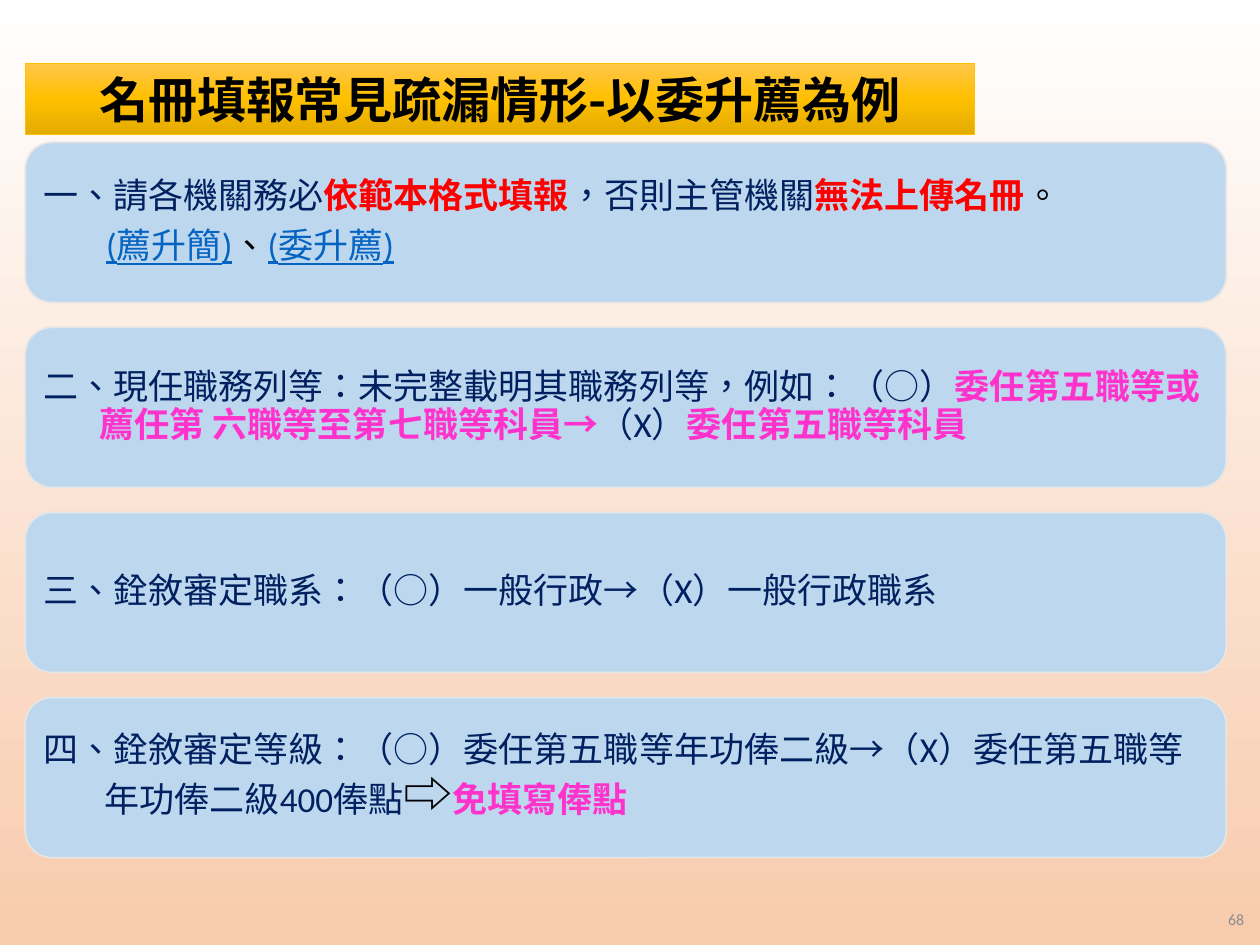
from typing import NamedTuple

from lxml import etree
from pptx import Presentation, util as u
from pptx.dml.color import RGBColor
from pptx.enum import shapes, text
from pptx.oxml import ns

Cm, Pt = u.Cm, u.Pt
CJK = "Noto Sans CJK SC"
NAVY, RED, PINK, BLACK, LINK = "002060", "FF0000", "FF33CC", "000000", "0563C1"


class Run(NamedTuple):
    text: str
    color: str = NAVY
    bold: bool = False
    underline: bool = False
    size: float = 20
    font: str = "Calibri"


class Para(NamedTuple):
    runs: list[Run]
    left: float = 0
    hanging: float = 0


class Box(NamedTuple):
    left: float
    top: float
    width: float
    height: float

    def emu(self) -> list[int]:
        return [Cm(v) for v in self]

    def inset(self, d: float) -> "Box":
        return Box(self.left + d, self.top + d, self.width - 2 * d, self.height - 2 * d)


TITLE = Box(0.51, 1.27, 19.13, 1.45)
FIRST_CARD = Box(0.51, 2.87, 24.21, 3.23)
CARD_PITCH = 3.73
PAGE_NUMBER = Box(19.61, 18.03, 5.72, 1.02)

CARDS = [
    [
        Para([Run("一、請各機關務必"), Run("依範本格式填報", RED, True),
              Run("，否則主管機關"), Run("無法上傳名冊", RED, True),
              Run("。", BLACK)], 1.47, 1.47),
        Para([Run("(薦升簡)", LINK, underline=True), Run("、", BLACK),
              Run("(委升薦)", LINK, underline=True)], 2.74, 1.47),
    ],
    [Para([Run("二、現任職務列等：未完整載明其職務列等，例如：（○）"),
           Run("委任第五職等或薦任第 六職等至第七職等科員→", PINK, True),
           Run("（X）"), Run("委任第五職等科員", PINK, True)], 1.14, 1.24)],
    [Para([Run("三、銓敘審定職系：（○）一般行政→（X）一般行政職系")])],
    [Para([Run("四、銓敘審定等級：（○）委任第五職等年功俸二級→"
               "（X）委任第五職等年功俸二級400俸點"),
           Run("⇨", BLACK, size=28), Run("免填寫俸點", PINK, True)], 1.24, 1.24)],
]


def rgb(value: str) -> RGBColor:
    return RGBColor.from_string(value)


def fill_gradient(fill, stops: list[tuple[float, str]]) -> None:
    """Fill from top to bottom with (percent, colour) stops."""
    fill.gradient()
    fill.gradient_angle = 270
    gs_lst = fill._fill._gradFill.find(ns.qn("a:gsLst"))
    for gs in list(gs_lst):
        gs_lst.remove(gs)
    for percent, color in stops:
        gs = etree.SubElement(gs_lst, ns.qn("a:gs"), pos=str(int(percent * 1000)))
        etree.SubElement(gs, ns.qn("a:srgbClr"), val=color)


def add_run(p, run: Run) -> None:
    r = p.add_run()
    r.text = run.text
    f = r.font
    f.size, f.bold, f.underline, f.name = Pt(run.size), run.bold, run.underline, run.font
    f.color.rgb = rgb(run.color)
    rPr = r._r.get_or_add_rPr()
    rPr.set("lang", "zh-TW")
    latin = rPr.find(ns.qn("a:latin"))
    latin.addnext(latin.makeelement(ns.qn("a:ea"), {"typeface": CJK}))


def add_panel(s, kind, box: Box, line: str, width: float):
    sp = s.shapes.add_shape(kind, *box.emu())
    sp.shadow.inherit = False
    sp.line.color.rgb = rgb(line)
    sp.line.width = Pt(width)
    return sp


def add_text(s, box: Box, paras: list[Para]):
    sp = s.shapes.add_textbox(*box.emu())
    tf = sp.text_frame
    tf.word_wrap = True
    tf.vertical_anchor = text.MSO_ANCHOR.MIDDLE
    for i, para in enumerate(paras):
        p = tf.paragraphs[0] if i == 0 else tf.add_paragraph()
        pPr = p._p.get_or_add_pPr()
        pPr.set("marL", str(Cm(para.left)))
        pPr.set("indent", str(-Cm(para.hanging)))
        for run in para.runs:
            add_run(p, run)
    return tf


def add_title(s) -> None:
    sp = add_panel(s, shapes.MSO_SHAPE.RECTANGLE, TITLE, "FFC000", 0.5)
    fill_gradient(sp.fill, [(0, "FFC64B"), (50, "FFC000"), (100, "E3AB00")])
    tf = sp.text_frame
    tf.vertical_anchor = text.MSO_ANCHOR.MIDDLE
    p = tf.paragraphs[0]
    p.alignment = text.PP_ALIGN.CENTER
    add_run(p, Run("名冊填報常見疏漏情形-以委升薦為例", BLACK, True, size=28, font=CJK))


def add_card(s, box: Box, paras: list[Para]) -> None:
    sp = add_panel(s, shapes.MSO_SHAPE.ROUNDED_RECTANGLE, box, "E7E6E6", 1)
    sp.fill.solid()
    sp.fill.fore_color.rgb = rgb("BDD7EE")
    tf = add_text(s, box.inset(0.16), paras)
    tf.margin_left = tf.margin_right = tf.margin_top = tf.margin_bottom = Cm(0.2)
    for p in tf.paragraphs:
        p.line_spacing = 0.9
        p.space_after = Pt(7)


def main() -> None:
    prs = Presentation()
    prs.slide_width, prs.slide_height = Cm(25.4), Cm(19.05)
    s = prs.slides.add_slide(prs.slide_layouts[6])
    fill_gradient(s.background.fill, [(0, "FFFFFF"), (100, "F8CBAD")])

    number = add_text(s, PAGE_NUMBER, [Para([Run("68", "8C8C8C", size=9)])])
    number.paragraphs[0].alignment = text.PP_ALIGN.RIGHT
    add_title(s)
    for i, paras in enumerate(CARDS):
        add_card(s, FIRST_CARD._replace(top=FIRST_CARD.top + i * CARD_PITCH), paras)

    prs.save("out.pptx")


if __name__ == "__main__":
    main()
